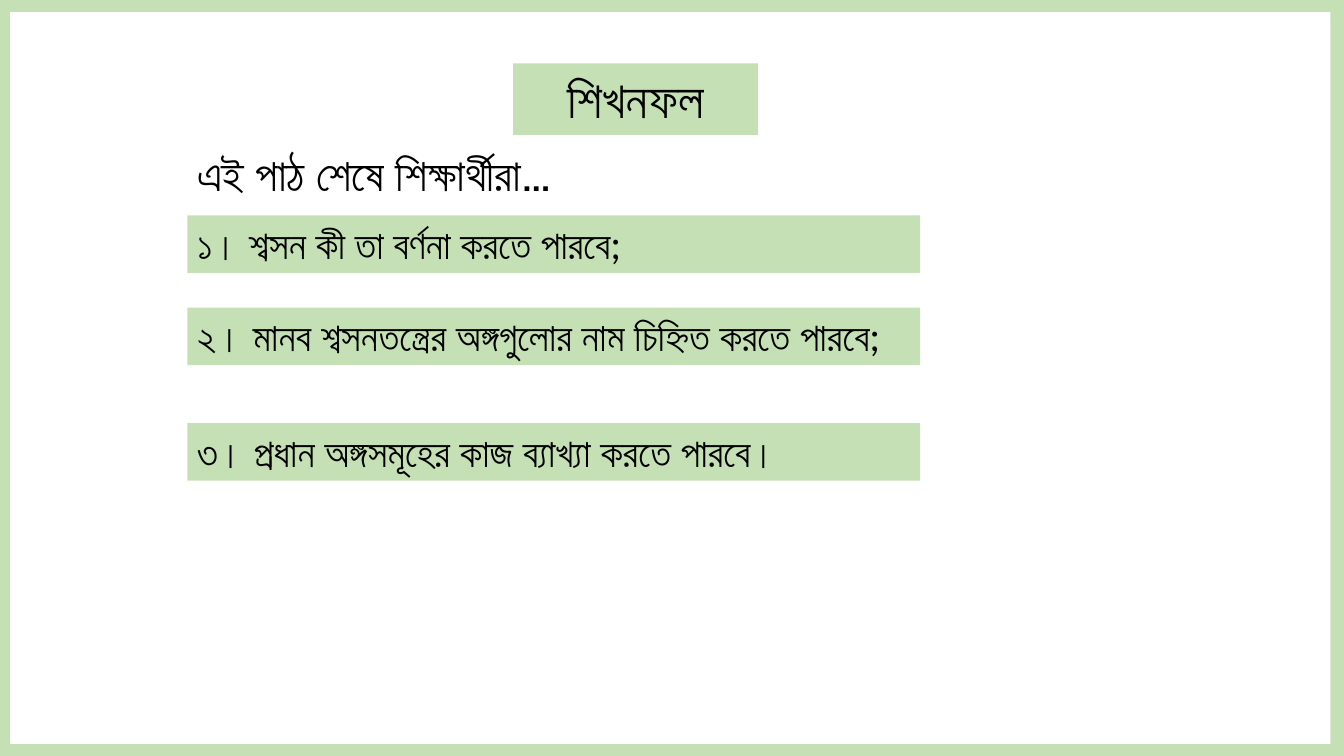
"""Build the learning outcomes slide with its green frame and three goals."""
from dataclasses import dataclass

import pptx
import pptx.dml.color
import pptx.enum.shapes
import pptx.enum.text
import pptx.shapes.autoshape
import pptx.slide
import pptx.util
from pptx.util import Cm

WIDE, HIGH = 33.87, 19.05
LEFT = 4.72
HEX = {"green": "C5E0B4", "ink": "000000"}


@dataclass
class Box:
    """A box in centimetres, with optional text."""
    left: float
    top: float
    width: float
    height: float
    text: str = ""
    size: int = 28


FRAME = [
    Box(0, 0, 0.25, HIGH),
    Box(0, 0, WIDE, 0.3),
    Box(WIDE - 0.34, 0, 0.34, HIGH),
    Box(0, HIGH - 0.3, WIDE, 0.3),
]
TITLE = Box(12.93, 1.6, 6.17, 1.8, "শিখনফল", 36)
INTRO = Box(LEFT, 3.56, 11.96, 1.63, "এই পাঠ শেষে শিক্ষার্থীরা…", 32)
GOALS = [
    Box(LEFT, top, 18.47, 1.45, text)
    for top, text in (
        (5.43, "১। শ্বসন কী তা বর্ণনা করতে পারবে;"),
        (7.75, "২। মানব শ্বসনতন্ত্রের অঙ্গগুলোর নাম চিহ্নিত করতে পারবে;"),
        (10.66, "৩। প্রধান অঙ্গসমূহের কাজ ব্যাখ্যা করতে পারবে।"),
    )
]


def color(name: str) -> pptx.dml.color.RGBColor:
    """Return the named colour."""
    return pptx.dml.color.RGBColor.from_string(HEX[name])


def area(box: Box) -> tuple[Cm, Cm, Cm, Cm]:
    """Return the place and size of a box as lengths."""
    return Cm(box.left), Cm(box.top), Cm(box.width), Cm(box.height)


def paint(shape: pptx.shapes.autoshape.Shape) -> None:
    """Fill a shape with the green."""
    shape.fill.solid()
    shape.fill.fore_color.rgb = color("green")


def write(shape: pptx.shapes.autoshape.Shape, box: Box,
          align: pptx.enum.text.PP_ALIGN = pptx.enum.text.PP_ALIGN.LEFT) -> None:
    """Set the text of a shape, keeping the shape's size fixed."""
    frame = shape.text_frame
    frame.text = box.text
    frame.word_wrap = True
    frame.auto_size = pptx.enum.text.MSO_AUTO_SIZE.NONE
    frame.vertical_anchor = pptx.enum.text.MSO_ANCHOR.TOP
    line = frame.paragraphs[0]
    line.alignment = align
    line.font.name = "Lato"
    line.font.size = pptx.util.Pt(box.size)
    line.font.color.rgb = color("ink")


def block(slide: pptx.slide.Slide, box: Box) -> None:
    """Draw a green block, with its text if it has any."""
    shape = slide.shapes.add_shape(
        pptx.enum.shapes.MSO_SHAPE.RECTANGLE, *area(box))
    shape.shadow.inherit = False
    shape.line.fill.background()
    paint(shape)
    if box.text:
        write(shape, box)


def main() -> None:
    """Build and save the slide."""
    deck = pptx.Presentation()
    deck.slide_width, deck.slide_height = Cm(WIDE), Cm(HIGH)
    slide = deck.slides.add_slide(deck.slide_layouts.get_by_name("Title Only"))

    title = slide.shapes.title
    title.left, title.top, title.width, title.height = area(TITLE)
    paint(title)
    write(title, TITLE, pptx.enum.text.PP_ALIGN.CENTER)

    for box in FRAME + GOALS:
        block(slide, box)
    write(slide.shapes.add_textbox(*area(INTRO)), INTRO)
    deck.save("out.pptx")


if __name__ == "__main__":
    main()
